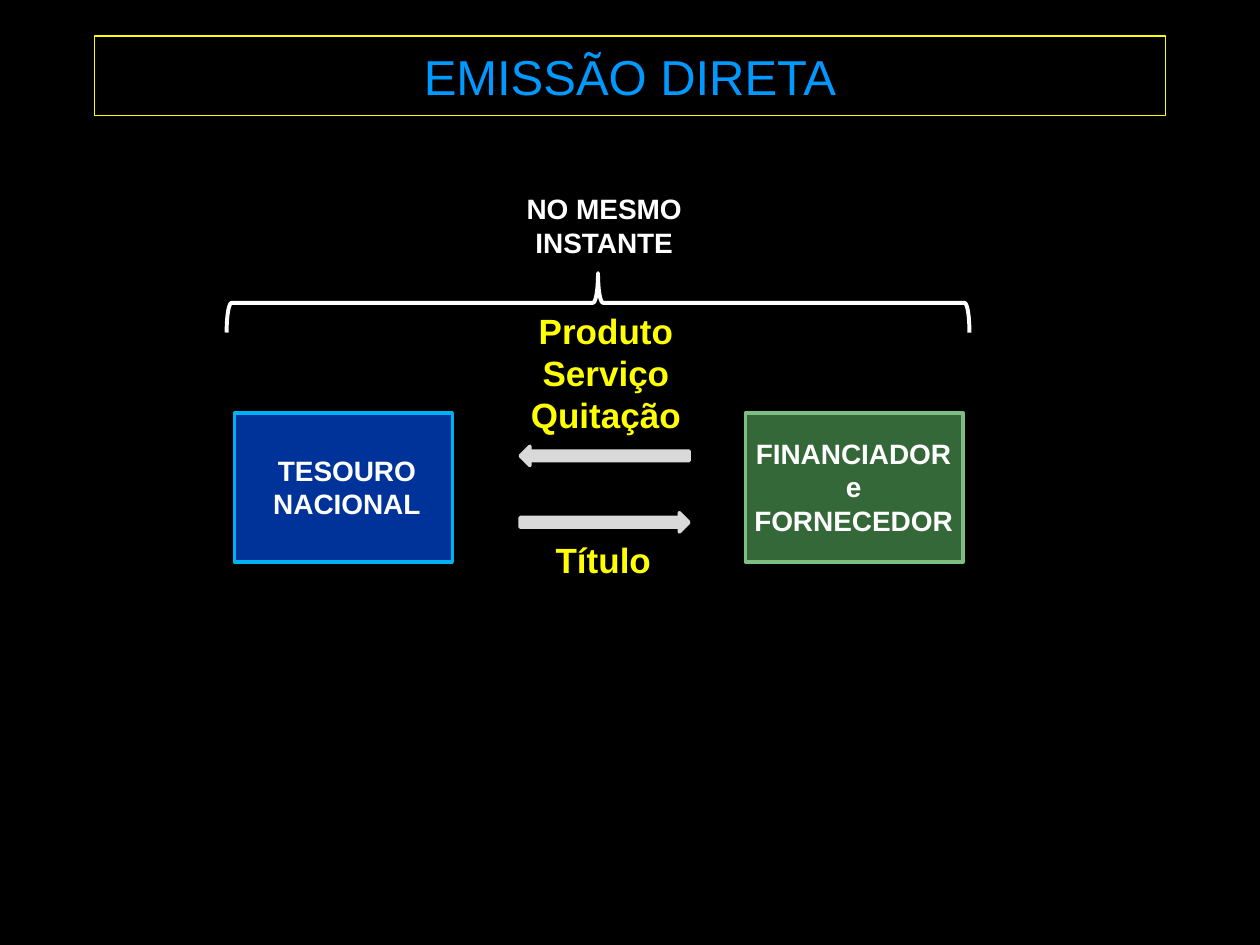
import pptx
import pptx.util
from pptx.dml.color import RGBColor
from pptx.enum.shapes import MSO_SHAPE
from pptx.enum.text import MSO_ANCHOR, PP_ALIGN

Pt = pptx.util.Pt
COLORS = {
    "black": "000000", "white": "FFFFFF", "yellow": "FFFF00", "title": "0099FF",
    "navy": "003399", "cyan": "00B0F0", "green": "356838", "mint": "7FBE83",
    "grey": "D9D9D9",
}


def color(name):
    return RGBColor.from_string(COLORS[name])


def add_outline(slide, kind, box, line, width, fill=None, rotation=0):
    shape = slide.shapes.add_shape(kind, *map(Pt, box))
    shape.shadow.inherit = False
    shape.rotation = rotation
    if fill:
        shape.fill.solid()
        shape.fill.fore_color.rgb = color(fill)
    else:
        shape.fill.background()
    shape.line.color.rgb = color(line)
    shape.line.width = Pt(width)
    return shape


def write_lines(frame, lines, size, ink, bold=True):
    frame.word_wrap = True
    frame.text = "\n".join(lines)
    for paragraph in frame.paragraphs:
        paragraph.alignment = PP_ALIGN.CENTER
        paragraph.font.name = "Arial"
        paragraph.font.size = Pt(size)
        paragraph.font.bold = bold
        paragraph.font.color.rgb = color(ink)


def add_label(slide, box, lines, size, ink):
    label = slide.shapes.add_textbox(*map(Pt, box))
    write_lines(label.text_frame, lines, size, ink)


def add_title(slide, box):
    title = add_outline(slide, MSO_SHAPE.RECTANGLE, box, "yellow", 0.75, "black")
    title.text_frame.vertical_anchor = MSO_ANCHOR.MIDDLE
    write_lines(title.text_frame, ["EMISSÃO DIRETA"], 28, "title", False)


def add_party(slide, box, fill, line, lines, label_offset, label_height):
    left, top, width, height = box
    add_outline(slide, MSO_SHAPE.RECTANGLE, box, line, 2, fill)
    label_width = 142
    label_left = left + (width - label_width) / 2 + label_offset
    label_top = top + (height - label_height) / 2
    add_label(slide, (label_left, label_top, label_width, label_height), lines, 16, "white")


def add_exchange(slide, box):
    left, top, width, height = box
    arrow_height = 11
    for arrow_top, rotation in ((top, 180), (top + height - arrow_height, 0)):
        add_outline(slide, MSO_SHAPE.RIGHT_ARROW, (left, arrow_top, width, arrow_height),
                    "grey", 2, "grey", rotation)
    label_left, label_width = left - 23, 142
    add_label(slide, (label_left + 1, top - 81.5, label_width, 80),
              ["Produto", "Serviço", "Quitação"], 20, "yellow")
    add_label(slide, (label_left - 0.5, top + height, label_width, 31.5),
              ["Título"], 20, "yellow")


def add_brace(slide, box):
    left, top, width, height = box
    center_x, center_y = left + width / 2, top + height / 2
    upright = (center_x - height / 2, center_y - width / 2, height, width)
    add_outline(slide, MSO_SHAPE.RIGHT_BRACE, upright, "white", 2.25, rotation=270)
    add_label(slide, (center_x - 61, top - 50, 129, 46), ["NO MESMO INSTANTE"], 16, "white")


def main():
    presentation = pptx.Presentation()
    presentation.slide_width, presentation.slide_height = Pt(720), Pt(540)
    slide = presentation.slides.add_slide(presentation.slide_layouts[6])
    slide.background.fill.solid()
    slide.background.fill.fore_color.rgb = color("black")
    add_title(slide, (54, 20.5, 612, 45.5))
    add_party(slide, (134, 236, 124.5, 85), "navy", "cyan",
              ["TESOURO NACIONAL"], 2, 46)
    add_party(slide, (426, 236, 124.5, 85), "green", "mint",
              ["FINANCIADOR", "e", "FORNECEDOR"], -0.5, 65.5)
    add_exchange(slide, (297.25, 255, 96.5, 49))
    add_brace(slide, (129.5, 156, 424.5, 34))
    presentation.save("out.pptx")


if __name__ == "__main__":
    main()
